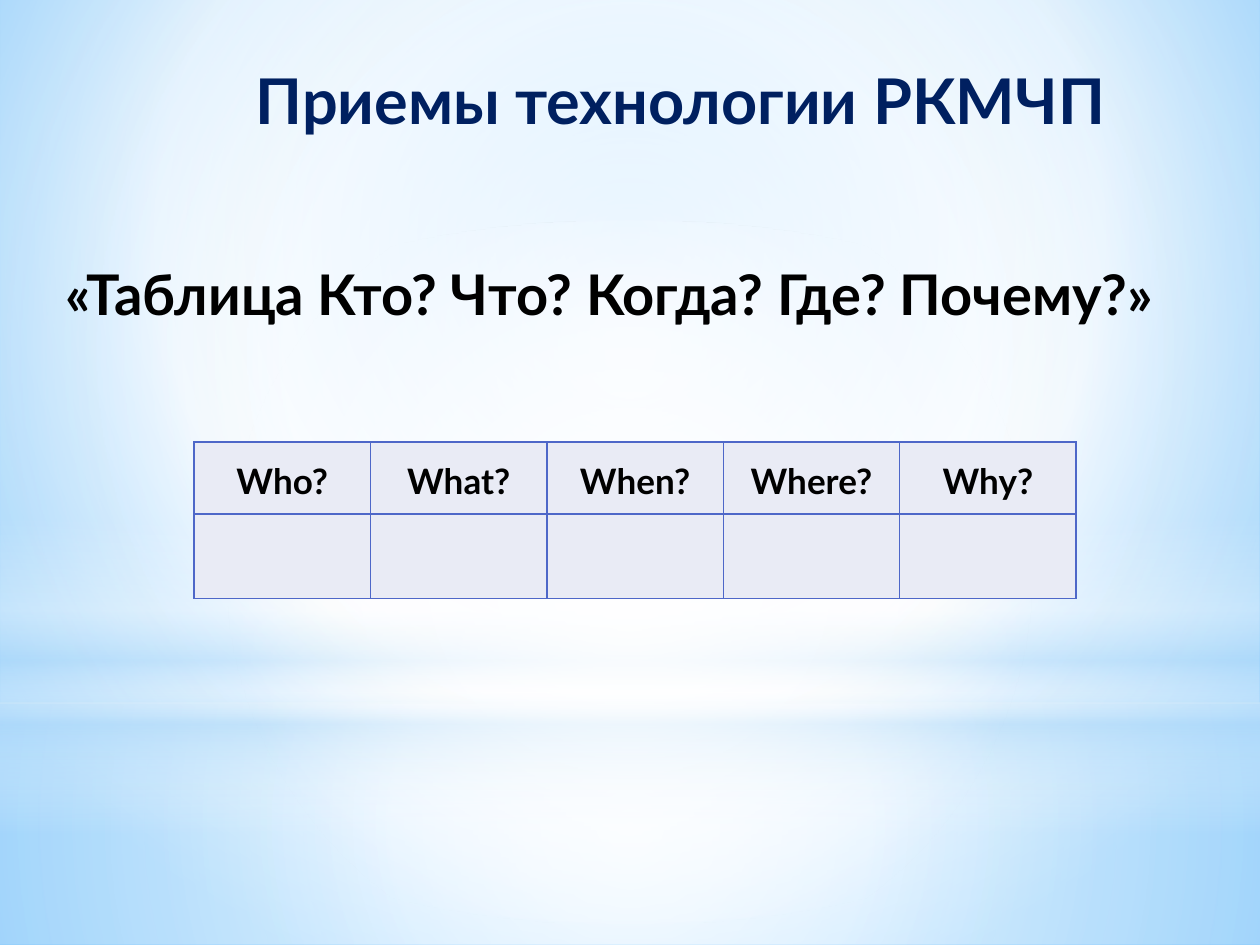
from pptx import Presentation
from pptx.dml.color import RGBColor
from pptx.enum.shapes import MSO_SHAPE
from pptx.enum.text import MSO_AUTO_SIZE, PP_ALIGN
from pptx.oxml import parse_xml
from pptx.oxml.ns import nsdecls, qn
from pptx.util import Inches, Pt

RECT, OVAL = MSO_SHAPE.RECTANGLE, MSO_SHAPE.OVAL
CENTER = PP_ALIGN.CENTER
GROW = MSO_AUTO_SIZE.SHAPE_TO_FIT_TEXT
MIDDLE = (50, 50, 50, 50)


def rgb(value):
    return RGBColor.from_string(value)


def write(tf, text, size=20, color="000000", align=None, spacing=None):
    p = tf.paragraphs[0]
    p.alignment = align
    p.line_spacing = spacing
    r = p.add_run()
    r.text = text
    r.font.name = "Lato"
    r.font.size = Pt(size)
    r.font.bold = True
    r.font.color.rgb = rgb(color)


def set_gradient(owner, fill, stops, center=None, angle=0):
    """Stops are (position %, colour, opacity %); a center makes it radial."""
    fill.gradient()
    grad = owner.element.find(".//" + qn("a:gradFill"))
    gs = "".join(
        f'<a:gs pos="{pos * 1000}"><a:srgbClr val="{color}">'
        f'<a:alpha val="{alpha * 1000}"/></a:srgbClr></a:gs>'
        for pos, color, alpha in stops)
    if center:
        left, top, right, bottom = (v * 1000 for v in center)
        shade = (f'<a:path path="circle"><a:fillToRect l="{left}" t="{top}" '
                 f'r="{right}" b="{bottom}"/></a:path>')
    else:
        shade = f'<a:lin ang="{angle * 60000}" scaled="0"/>'
    grad.getparent().replace(grad, parse_xml(
        f'<a:gradFill rotWithShape="1" {nsdecls("a")}>'
        f'<a:gsLst>{gs}</a:gsLst>{shade}</a:gradFill>'))


class SlideBuilder:
    navy = "002060"
    cell_fill = "E9EBF5"
    border = "4E67C8"

    def __init__(self, slide):
        self.s = slide

    def background(self, stops, center):
        set_gradient(self.s, self.s.background.fill, stops, center)

    def glow(self, kind, box, stops, center=None, angle=0):
        sp = self.s.shapes.add_shape(kind, *map(Inches, box))
        sp.shadow.inherit = False
        sp.line.fill.background()
        set_gradient(sp, sp.fill, stops, center, angle)

    def text(self, box, text, **fmt):
        tf = self.s.shapes.add_textbox(*map(Inches, box)).text_frame
        tf.word_wrap = False
        tf.auto_size = GROW
        write(tf, text, **fmt)

    def table(self, box, headers, heights):
        table = self.s.shapes.add_table(
            len(heights), len(headers), *map(Inches, box)).table
        for row, height in zip(table.rows, heights):
            row.height = Inches(height)
        for cell in table.iter_cells():
            self.style_cell(cell)
        for col, header in enumerate(headers):
            write(table.cell(0, col).text_frame, header,
                  align=CENTER, spacing=1.15)

    def style_cell(self, cell):
        cell.margin_left = cell.margin_right = Inches(0.09)
        cell.margin_top = cell.margin_bottom = Inches(0.09)
        cell.fill.solid()
        cell.fill.fore_color.rgb = rgb(self.cell_fill)
        tc_pr = cell._tc.get_or_add_tcPr()
        for i, side in enumerate("LRTB"):
            tc_pr.insert(i, parse_xml(
                f'<a:ln{side} w="{Pt(1)}" {nsdecls("a")}><a:solidFill>'
                f'<a:srgbClr val="{self.border}"/></a:solidFill></a:ln{side}>'))


def main():
    prs = Presentation()
    prs.slide_width, prs.slide_height = Inches(10), Inches(7.5)
    slide = SlideBuilder(prs.slides.add_slide(prs.slide_layouts[6]))

    # Sky backdrop
    slide.background([(0, "9ED5FF", 100), (60, "FFFFFF", 100),
                      (100, "5BB9FF", 100)], (20, 10, 20, 60))
    slide.glow(RECT, (0, 5.58, 10, 1.92),
               [(0, "FFFFFF", 91), (37, "FFFFFF", 76), (100, "B4DCFA", 79)],
               MIDDLE)
    slide.glow(RECT, (0, 0, 10, 5.58),
               [(0, "FFFFFF", 89), (48, "FFFFFF", 62), (100, "B4DCFA", 79)],
               MIDDLE)

    # Horizon band and central light
    slide.glow(RECT, (0, 4.12, 10, 2.5),
               [(0, "FFFFFF", 0), (29, "FFFFFF", 30), (45, "B4DCFA", 40),
                (55, "FFFFFF", 26), (65, "B4DCFA", 60), (100, "FFFFFF", 0)],
               angle=90)
    slide.glow(OVAL, (0, 1.75, 10, 5.58),
               [(0, "FFFFFF", 100), (56, "FFFFFF", 0)], MIDDLE)

    # Title, question table and its heading
    slide.text((1.93, 0.44, 6.98, 0.71), "Приемы технологии РКМЧП",
               size=36, color=slide.navy)
    slide.table((1.54, 3.51, 7, 1.24),
                ["Who?", "What?", "When?", "Where?", "Why?"], [0.57, 0.67])
    slide.text((0.42, 2.01, 9.57, 0.64),
               "«Таблица Кто? Что? Когда? Где? Почему?»", size=32)

    prs.save("out.pptx")


if __name__ == "__main__":
    main()
